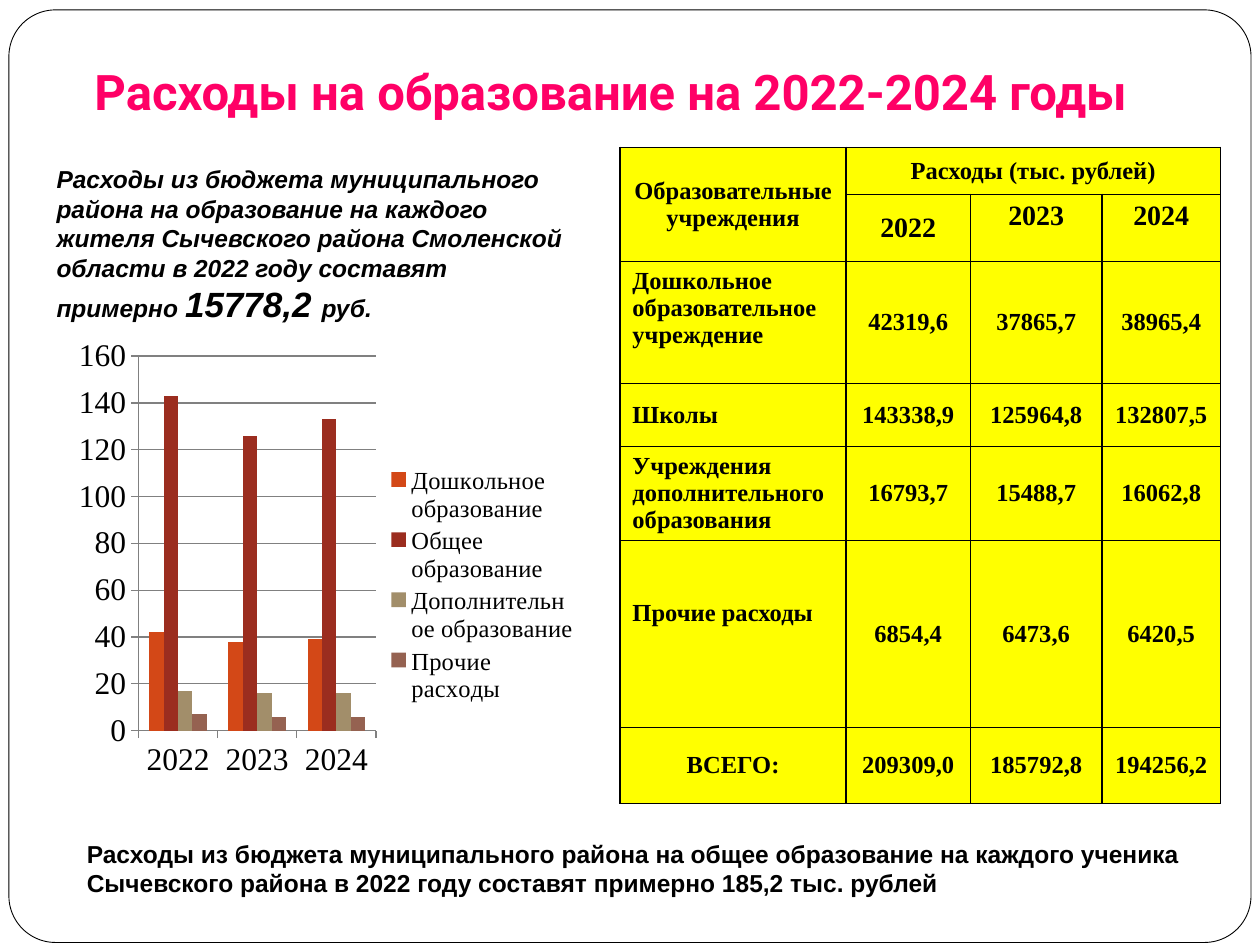
from lxml.etree import SubElement
from pptx import Presentation
from pptx.chart.data import CategoryChartData
from pptx.dml.color import RGBColor
from pptx.enum.chart import XL_CHART_TYPE, XL_LEGEND_POSITION, XL_TICK_MARK
from pptx.enum.shapes import MSO_SHAPE
from pptx.enum.text import MSO_ANCHOR, PP_ALIGN
from pptx.oxml import parse_xml
from pptx.oxml.ns import nsdecls, qn
from pptx.util import Cm, Pt

COLORS = {"paper": "FFFFFF", "ink": "000000", "title": "FF0066", "cell": "FFFF00", "grid": "808080"}
SERIES = [
    ("Дошкольное образование", (42, 38, 39), "D34817"),
    ("Общее образование", (143, 126, 133), "9B2D1F"),
    ("Дополнительное образование", (17, 16, 16), "A28E6A"),
    ("Прочие расходы", (7, 6, 6), "956251"),
]
YEARS = ("2022", "2023", "2024")
TABLE_ROWS = [
    ("Образовательные учреждения", "Расходы (тыс. рублей)", "", ""),
    ("", *YEARS),
    ("Дошкольное образовательное учреждение", "42319,6", "37865,7", "38965,4"),
    ("Школы", "143338,9", "125964,8", "132807,5"),
    ("Учреждения\nдополнительного\nобразования", "16793,7", "15488,7", "16062,8"),
    ("Прочие расходы", "6854,4", "6473,6", "6420,5"),
    ("ВСЕГО:", "209309,0", "185792,8", "194256,2"),
]
COLUMN_WIDTHS = (4.56, 2.5, 2.66, 2.38)
ROW_HEIGHTS = (0.95, 1.35, 2.46, 1.27, 1.89, 3.77, 1.53)
TABLE_FONT = {"name": "Times New Roman", "size": Pt(14), "bold": True}
NOTE_FONT = {"name": "Arial", "size": Pt(14), "bold": True}


def place(left, top, width, height):
    """Turn centimetres into a position and size."""
    return Cm(left), Cm(top), Cm(width), Cm(height)


def apply_values(target, values):
    """Set every attribute listed in values."""
    for name, value in values.items():
        setattr(target, name, value)


def style_font(font, values, color="ink"):
    """Apply font values and a palette colour."""
    apply_values(font, values)
    font.color.rgb = RGBColor.from_string(COLORS[color])


def add_frame(slide, title):
    """Draw the rounded page border behind the title."""
    frame = slide.shapes.add_shape(MSO_SHAPE.ROUNDED_RECTANGLE, *place(0.18, 0.2, 25.04, 18.8))
    frame.adjustments[0] = 0.05
    frame.shadow.inherit = False
    frame.fill.solid()
    frame.fill.fore_color.rgb = RGBColor.from_string(COLORS["paper"])
    frame.line.color.rgb = RGBColor.from_string(COLORS["ink"])
    frame.line.width = Pt(0.5)
    title.element.addprevious(frame.element)


def format_title(title, text):
    """Place and style the title placeholder."""
    apply_values(title, dict(zip(("left", "top", "width", "height"), place(0, 0.71, 24.61, 1.96))))
    apply_values(title.text_frame, {"vertical_anchor": MSO_ANCHOR.BOTTOM, "margin_bottom": Cm(0.25)})
    para = title.text_frame.paragraphs[0]
    para.alignment = PP_ALIGN.CENTER
    span = para.add_run()
    span.text = text
    style_font(span.font, {"name": "Roboto", "size": Pt(28), "bold": True}, "title")


def add_note(slide, position, spans):
    """Add a text box from (text, font changes) pairs."""
    box = slide.shapes.add_textbox(*place(*position))
    apply_values(box.text_frame, {"word_wrap": True, "vertical_anchor": MSO_ANCHOR.MIDDLE})
    para = box.text_frame.paragraphs[0]
    for text, changes in spans:
        span = para.add_run()
        span.text = text
        style_font(span.font, NOTE_FONT | changes)


def add_borders(cell):
    """Give a cell thin lines on all four sides."""
    properties = cell._tc.get_or_add_tcPr()
    for index, side in enumerate(("lnL", "lnR", "lnT", "lnB")):
        properties.insert(index, parse_xml(
            f'<a:{side} {nsdecls("a")} w="12700"><a:solidFill>'
            f'<a:srgbClr val="{COLORS["ink"]}"/></a:solidFill></a:{side}>'))


def fill_cell(cell, text, row, column):
    """Write and style one table cell."""
    is_label = column == 0 and 2 <= row <= 5
    at_top = (row, column) in ((1, 2), (1, 3), (2, 0), (5, 0))
    side = Cm(0.25) if column == 0 else Cm(0.15)
    apply_values(cell, {
        "text": text,
        "vertical_anchor": MSO_ANCHOR.TOP if at_top else MSO_ANCHOR.MIDDLE,
        "margin_left": side,
        "margin_right": side,
        "margin_top": Cm(1.2) if (row, column) == (5, 0) else Cm(0.13),
    })
    cell.fill.solid()
    cell.fill.fore_color.rgb = RGBColor.from_string(COLORS["cell"])
    add_borders(cell)
    for para in cell.text_frame.paragraphs:
        para.alignment = PP_ALIGN.JUSTIFY if is_label else PP_ALIGN.CENTER
        style_font(para.font, TABLE_FONT | {"size": Pt(16 if row == 1 else 14)})


def add_expense_table(slide):
    """Add the table of expenses by institution and year."""
    position = place(12.5, 2.97, sum(COLUMN_WIDTHS), sum(ROW_HEIGHTS))
    table = slide.shapes.add_table(len(TABLE_ROWS), len(COLUMN_WIDTHS), *position).table
    for column, width in zip(table.columns, COLUMN_WIDTHS):
        column.width = Cm(width)
    for row, height in zip(table.rows, ROW_HEIGHTS):
        row.height = Cm(height)
    for row, texts in enumerate(TABLE_ROWS):
        for column, text in enumerate(texts):
            fill_cell(table.cell(row, column), text, row, column)
    table.cell(0, 0).merge(table.cell(1, 0))
    table.cell(0, 1).merge(table.cell(0, 3))


def set_plot_layout(chart, left, top, width, height):
    """Fix the inner plot area as fractions of the chart."""
    plot_area = chart.element.find(".//" + qn("c:plotArea"))
    for old in plot_area.findall(qn("c:layout")):
        plot_area.remove(old)
    layout = parse_xml(f'<c:layout {nsdecls("c")}><c:manualLayout/></c:layout>')
    values = {"layoutTarget": "inner", "xMode": "edge", "yMode": "edge",
              "x": left, "y": top, "w": width, "h": height}
    for name, value in values.items():
        SubElement(layout[0], qn(f"c:{name}")).set("val", str(value))
    plot_area.insert(0, layout)


def add_expense_chart(slide):
    """Add the clustered columns of expenses by year."""
    data = CategoryChartData()
    data.categories = YEARS
    for name, values, _ in SERIES:
        data.add_series(name, values)
    position = place(0.79, 6.55, 11.13, 10.49)
    chart = slide.shapes.add_chart(XL_CHART_TYPE.COLUMN_CLUSTERED, *position, data).chart
    apply_values(chart, {"has_title": False, "has_legend": True})
    style_font(chart.font, {"name": "Times New Roman", "size": Pt(18)})
    apply_values(chart.legend, {"position": XL_LEGEND_POSITION.RIGHT, "include_in_layout": False})
    style_font(chart.legend.font, {"name": "Times New Roman", "size": Pt(14)})
    plot = chart.plots[0]
    apply_values(plot, {"vary_by_categories": False, "gap_width": 150, "overlap": 0})
    for series, (_, _, color) in zip(plot.series, SERIES):
        series.format.fill.solid()
        series.format.fill.fore_color.rgb = RGBColor.from_string(color)
    value_axis = chart.value_axis
    apply_values(value_axis, {"minimum_scale": 0, "maximum_scale": 160, "major_unit": 20,
                              "has_major_gridlines": True})
    for axis in (chart.category_axis, value_axis):
        axis.major_tick_mark = XL_TICK_MARK.OUTSIDE
    for part in (chart.category_axis, value_axis, value_axis.major_gridlines):
        part.format.line.color.rgb = RGBColor.from_string(COLORS["grid"])
        part.format.line.width = Pt(0.75)
    set_plot_layout(chart, 0.18, 0.06, 0.43, 0.72)


def main():
    """Build the education expenses slide."""
    deck = Presentation()
    apply_values(deck, {"slide_width": Cm(25.4), "slide_height": Cm(19.05)})
    page = deck.slides.add_slide(deck.slide_layouts[5])
    title = page.shapes.title
    add_frame(page, title)
    format_title(title, "Расходы на образование на 2022-2024 годы")
    add_expense_table(page)
    add_note(page, (0.89, 3.12, 10.8, 3.61), [
        ("Расходы из бюджета муниципального района на образование на каждого жителя Сычевского "
         "района Смоленской области в 2022 году составят примерно ", {"italic": True}),
        ("15778,2 ", {"italic": True, "size": Pt(20)}),
        ("руб.", {"italic": True}),
    ])
    add_note(page, (1.5, 16.92, 22.86, 1.17), [
        ("Расходы из бюджета муниципального района на общее образование на каждого ученика "
         "Сычевского района в 2022 году составят примерно 185,2 тыс. рублей", {}),
    ])
    add_expense_chart(page)
    deck.save("out.pptx")


if __name__ == "__main__":
    main()
